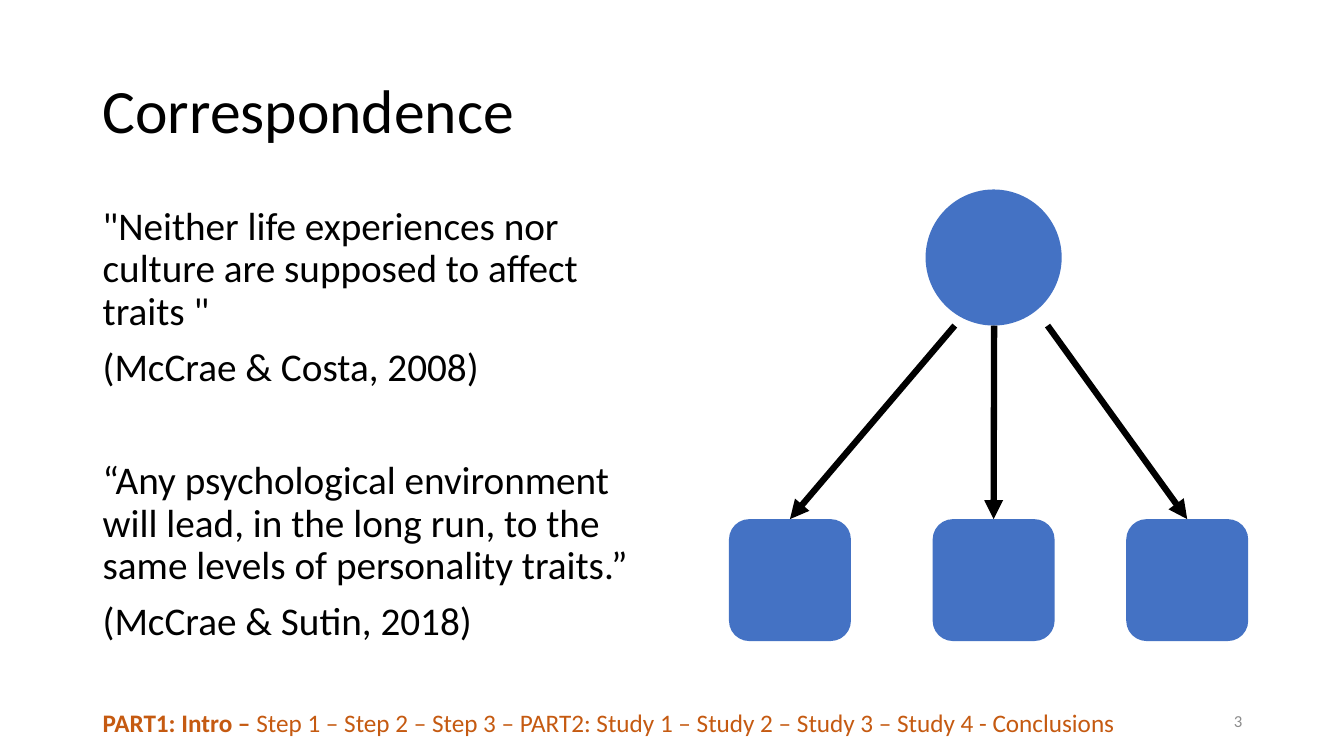
from lxml import etree
from pptx import Presentation
from pptx.dml.color import RGBColor
from pptx.enum.shapes import MSO_CONNECTOR, MSO_SHAPE
from pptx.enum.text import MSO_ANCHOR, PP_ALIGN
from pptx.oxml.ns import qn
from pptx.util import Inches, Pt

TOP, MIDDLE = MSO_ANCHOR.TOP, MSO_ANCHOR.MIDDLE
LEFT, RIGHT = PP_ALIGN.LEFT, PP_ALIGN.RIGHT
STRAIGHT = MSO_CONNECTOR.STRAIGHT
OVAL, ROUNDED = MSO_SHAPE.OVAL, MSO_SHAPE.ROUNDED_RECTANGLE

COLORS = {"text": "000000", "number": "8C8C8C", "outline": "C55A11", "node": "4472C4"}
FONT = "Calibri"

TITLE = "Correspondence"
QUOTES = [
    ("\"Neither life experiences nor culture are supposed to affect traits \"", 0),
    ("(McCrae & Costa, 2008)", 10),
    ("“Any psychological environment will lead, in the long run, to the same levels of personality traits.”", 50.7),
    ("(McCrae & Sutin, 2018)", 10),
]
CURRENT_PART = "PART1: Intro –"
OTHER_PARTS = " Step 1 – Step 2 – Step 3 – PART2: Study 1 – Study 2 – Study 3 – Study 4 - Conclusions"
PAGE_NUMBER = "3"

CIRCLE = (9.18, 1.88, 1.35)
SQUARE_TOP, SQUARE_SIZE = 5.15, 1.21
BRANCHES = [(7.23, 9.47), (9.25, 9.86), (11.17, 10.39)]


def color(name):
    return RGBColor.from_string(COLORS[name])


def add_text(page, paragraphs, at, size, tint="text", anchor=TOP, align=LEFT, spacing=1.0):
    """Add a text box from (spans, space before) pairs, with spans as (text, bold)."""
    box = page.shapes.add_textbox(*map(Inches, at))
    frame = box.text_frame
    frame.word_wrap = True
    frame.vertical_anchor = anchor
    for index, (spans, before) in enumerate(paragraphs):
        para = frame.add_paragraph() if index else frame.paragraphs[0]
        para.alignment = align
        para.line_spacing = spacing
        para.space_before = Pt(before)
        for text, bold in spans:
            span = para.add_run()
            span.text = text
            span.font.name = FONT
            span.font.size = Pt(size)
            span.font.bold = bold
            span.font.color.rgb = color(tint)


def add_node(page, kind, left, top, size):
    node = page.shapes.add_shape(kind, *map(Inches, (left, top, size, size)))
    node.shadow.inherit = False
    node.fill.solid()
    node.fill.fore_color.rgb = color("node")
    node.line.fill.background()
    return node


def add_arrow(page, start_x, start_y, target):
    x, y = Inches(start_x), Inches(start_y)
    arrow = page.shapes.add_connector(STRAIGHT, x, y, x, target.top)
    arrow.end_connect(target, 0)
    arrow.line.color.rgb = color("text")
    arrow.line.width = Pt(4.5)
    etree.SubElement(arrow.line._get_or_add_ln(), qn("a:tailEnd"), type="triangle")
    etree.SubElement(arrow._element.spPr, qn("a:effectLst"))


def main():
    deck = Presentation()
    deck.slide_width, deck.slide_height = Inches(13.33), Inches(7.5)
    page = deck.slides.add_slide(deck.slide_layouts[6])

    add_text(page, [([(TITLE, False)], 0)], (0.92, 0.4, 11.5, 1.45), 44,
             anchor=MIDDLE, spacing=0.9)
    quotes = [([(text, False)], before) for text, before in QUOTES]
    add_text(page, quotes, (0.92, 2, 5.67, 4.76), 28, spacing=0.9)
    add_text(page, [([(PAGE_NUMBER, False)], 0)], (9.42, 6.95, 3, 0.4), 12,
             tint="number", anchor=MIDDLE, align=RIGHT)

    add_node(page, OVAL, *CIRCLE)
    circle_bottom = CIRCLE[1] + CIRCLE[2]
    for square_left, start_x in BRANCHES:
        square = add_node(page, ROUNDED, square_left, SQUARE_TOP, SQUARE_SIZE)
        add_arrow(page, start_x, circle_bottom, square)

    add_text(page, [([(CURRENT_PART, True), (OTHER_PARTS, False)], 0)],
             (0.92, 6.97, 11.77, 0.4), 18, tint="outline")
    deck.save("out.pptx")


if __name__ == "__main__":
    main()
